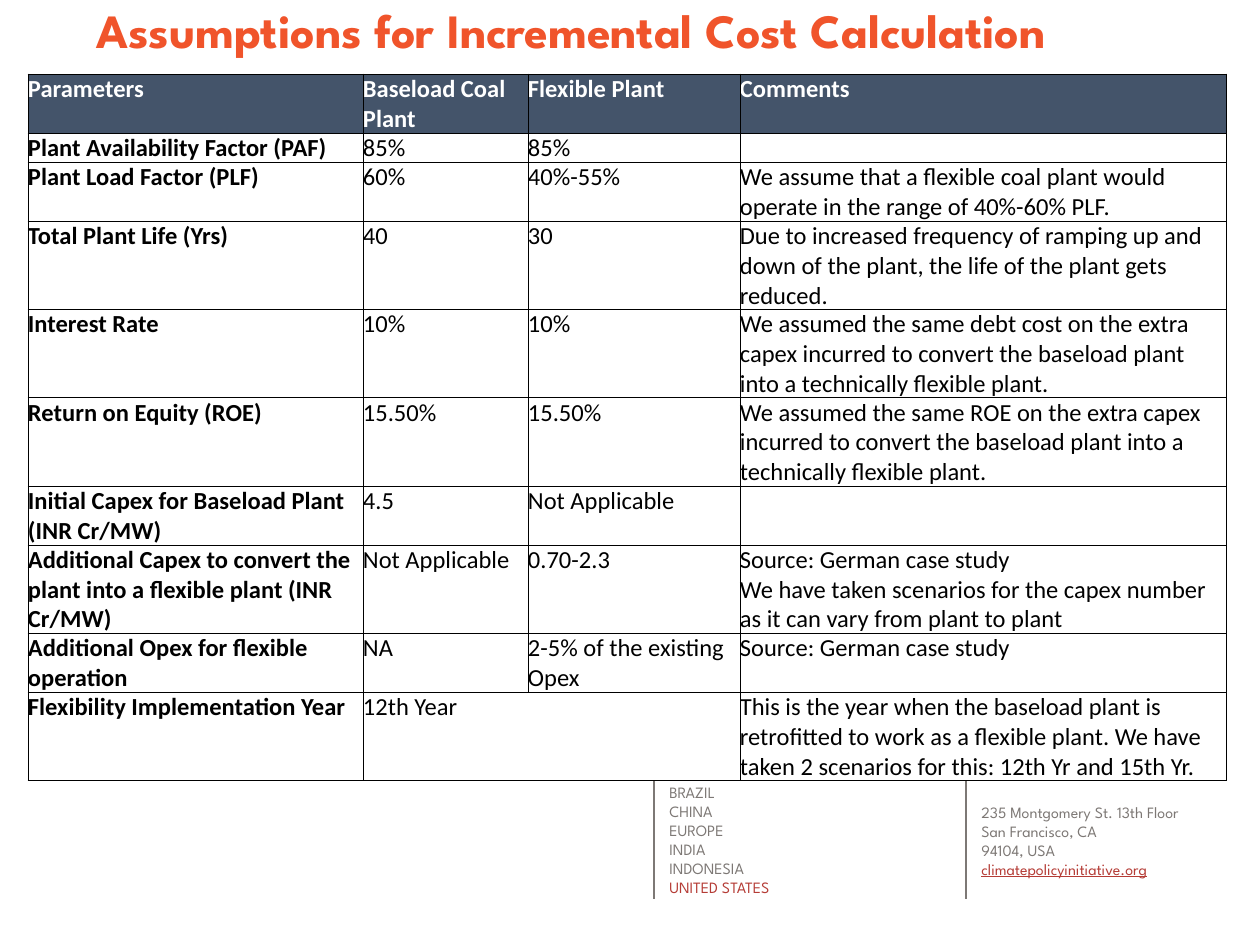
from collections import namedtuple
from dataclasses import dataclass

from lxml.etree import SubElement
from pptx import Presentation
from pptx.dml.color import RGBColor
from pptx.enum.shapes import MSO_CONNECTOR
from pptx.oxml import parse_xml
from pptx.oxml.ns import nsdecls, qn
from pptx.util import Emu, Pt

Box = namedtuple("Box", "left top width height")


@dataclass(frozen=True)
class Theme:
    """Colours, fonts and type sizes of the slide."""
    orange: str = "F0542B"
    red: str = "B53C36"
    grey: str = "7D7875"
    navy: str = "44546A"
    white: str = "FFFFFF"
    black: str = "000000"
    display: str = "League Spartan"
    body: str = "Calibri"
    title_size: float = 27.3
    table_size: float = 14
    footer_size: float = 9
    footer_pitch: float = 10.9
    footer_rule: float = 0.75
    border: float = 0.5


THEME = Theme()
COLUMN_WIDTHS = [335, 165, 212, 486]
LINE_HEIGHT = 29
ROW_LINES = [2, 1, 2, 3, 3, 3, 2, 3, 2, 3]
ASSUMPTIONS = [
    ["Parameters", "Baseload Coal Plant", "Flexible Plant", "Comments"],
    ["Plant Availability Factor (PAF)", "85%", "85%", ""],
    ["Plant Load Factor (PLF)", "60%", "40%-55%",
     "We assume that a flexible coal plant would operate in the range of 40%-60% PLF."],
    ["Total Plant Life (Yrs)", "40", "30",
     "Due to increased frequency of ramping up and down of the plant, "
     "the life of the plant gets reduced."],
    ["Interest Rate", "10%", "10%",
     "We assumed the same debt cost on the extra capex incurred to convert "
     "the baseload plant into a technically flexible plant."],
    ["Return on Equity (ROE)", "15.50%", "15.50%",
     "We assumed the same ROE on the extra capex incurred to convert "
     "the baseload plant into a technically flexible plant."],
    ["Initial Capex for Baseload Plant (INR Cr/MW)", "4.5", "Not Applicable", ""],
    ["Additional Capex to convert the plant into a flexible plant (INR Cr/MW)",
     "Not Applicable", "0.70-2.3",
     "Source: German case study\nWe have taken scenarios for the capex number "
     "as it can vary from plant to plant"],
    ["Additional Opex for flexible operation", "NA", "2-5% of the existing Opex",
     "Source: German case study"],
    ["Flexibility Implementation Year", "12th Year", "",
     "This is the year when the baseload plant is retrofitted to work as a flexible plant. "
     "We have taken 2 scenarios for this: 12th Yr and 15th Yr."],
]
OFFICES = ["BRAZIL", "CHINA", "EUROPE", "INDIA", "INDONESIA", "UNITED STATES"]
ADDRESS = ["235 Montgomery St. 13th Floor", "San Francisco, CA", "94104, USA",
           "climatepolicyinitiative.org"]


def px(length):
    """Turn a length in px into EMU."""
    return Emu(round(length * 914400 / 126))


def style_runs(paragraph, face, size, color, bold=False, underline=False):
    """Format every run of a paragraph."""
    for run in paragraph.runs:
        run.font.name = face
        run.font.size = Pt(size)
        run.font.bold = bold
        run.font.underline = underline
        run.font.color.rgb = RGBColor.from_string(color)


def add_text_frame(slide, box):
    """Add a wrapping text box and return its text frame."""
    frame = slide.shapes.add_textbox(*map(px, box)).text_frame
    frame.word_wrap = True
    return frame


def add_title(slide, box, heading):
    """Add the slide heading."""
    frame = add_text_frame(slide, box)
    frame.text = heading
    style_runs(frame.paragraphs[0], THEME.display, THEME.title_size, THEME.orange, bold=True)


def add_footer_column(slide, box, lines, text_top, link=False):
    """Add a vertical rule and the lines beside it, the last one in red."""
    rule = slide.shapes.add_connector(
        MSO_CONNECTOR.STRAIGHT, px(box.left), px(box.top),
        px(box.left), px(box.top + box.height))
    rule.line.color.rgb = RGBColor.from_string(THEME.grey)
    rule.line.width = Pt(THEME.footer_rule)
    SubElement(rule.element.spPr, qn("a:effectLst"))
    frame = add_text_frame(
        slide, Box(box.left + 3, box.top + text_top, box.width, 13 + 19 * len(lines)))
    frame.text = "\n".join(lines)
    for paragraph in frame.paragraphs:
        paragraph.line_spacing = Pt(THEME.footer_pitch)
        style_runs(paragraph, THEME.display, THEME.footer_size, THEME.grey)
    style_runs(frame.paragraphs[-1], THEME.display, THEME.footer_size, THEME.red, underline=link)


def add_borders(cell):
    """Draw a thin line on all four sides of a cell."""
    properties = cell._tc.get_or_add_tcPr()
    for position, side in enumerate("LRTB"):
        properties.insert(position, parse_xml(
            f'<a:ln{side} {nsdecls("a")} w="{Pt(THEME.border)}"><a:solidFill>'
            f'<a:srgbClr val="{THEME.black}"/></a:solidFill></a:ln{side}>'))


def fill_cell(cell, wording, header, bold):
    """Write and format one table cell."""
    cell.margin_left = cell.margin_right = cell.margin_top = cell.margin_bottom = 0
    add_borders(cell)
    if header:
        cell.fill.solid()
        cell.fill.fore_color.rgb = RGBColor.from_string(THEME.navy)
    else:
        cell.fill.background()
    paragraph = cell.text_frame.paragraphs[0]
    if wording:
        paragraph.text = wording
        color = THEME.white if header else THEME.black
        style_runs(paragraph, THEME.body, THEME.table_size, color, bold)
    else:
        SubElement(paragraph._p, qn("a:endParaRPr"), sz=str(THEME.table_size * 100))


def add_assumptions_table(slide, box):
    """Add the table of assumptions, its rows sized by their line counts."""
    table = slide.shapes.add_table(
        len(ASSUMPTIONS), len(COLUMN_WIDTHS), *map(px, box)).table
    table.first_row = table.horz_banding = False
    for column, width in zip(table.columns, COLUMN_WIDTHS):
        column.width = px(width)
    for row, lines in zip(table.rows, ROW_LINES):
        row.height = px(lines * LINE_HEIGHT)
    for row_index, entries in enumerate(ASSUMPTIONS):
        for column_index, wording in enumerate(entries):
            header = row_index == 0
            fill_cell(table.cell(row_index, column_index), wording,
                      header, header or column_index == 0)
    last = len(ASSUMPTIONS) - 1
    table.cell(last, 1).merge(table.cell(last, 2))


def main():
    """Build and save the slide."""
    deck = Presentation()
    deck.slide_width, deck.slide_height = px(1260), px(945)
    slide = deck.slides.add_slide(deck.slide_layouts[6])
    add_footer_column(slide, Box(654, 781, 213, 118), OFFICES, -5)
    add_footer_column(slide, Box(966, 781, 273, 118), ADDRESS, 15, link=True)
    add_title(slide, Box(84, -5, 1092, 117), "Assumptions for Incremental Cost Calculation")
    add_assumptions_table(
        slide, Box(28, 74, sum(COLUMN_WIDTHS), sum(ROW_LINES) * LINE_HEIGHT))
    deck.save("out.pptx")


if __name__ == "__main__":
    main()
